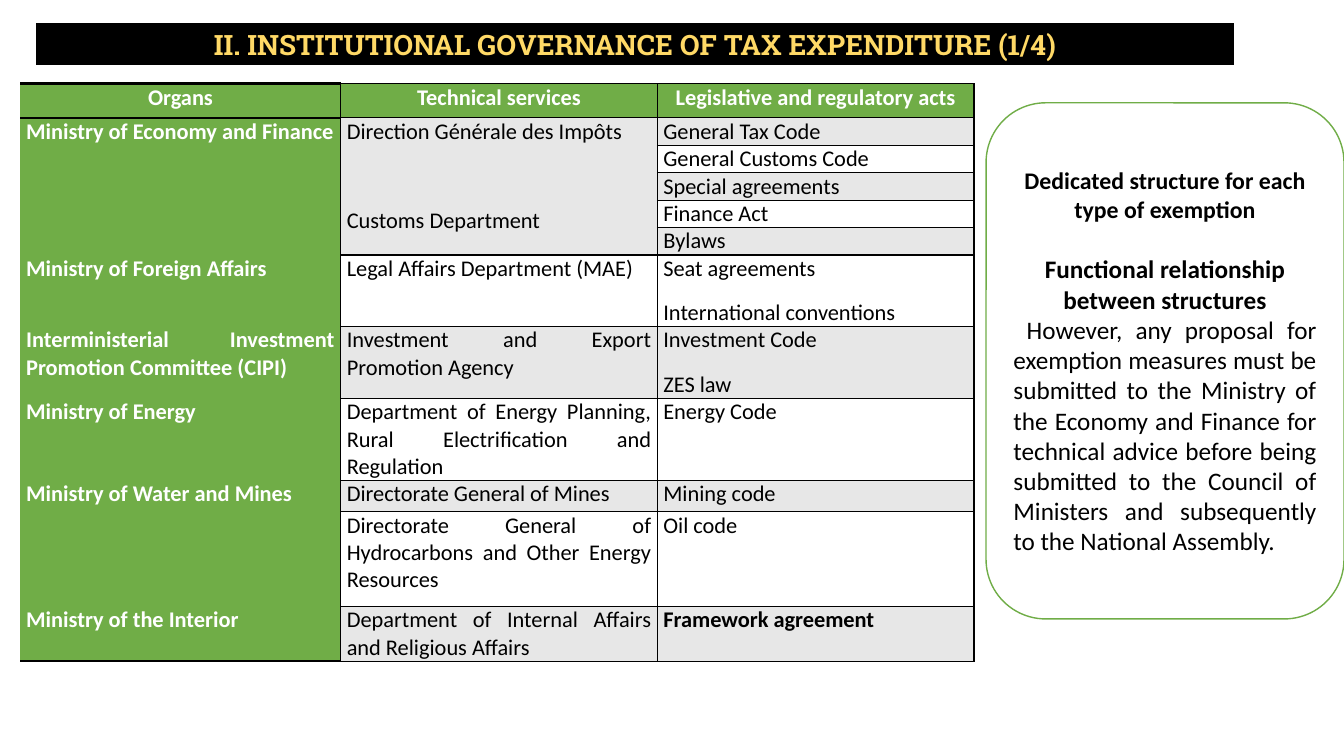
from lxml.etree import SubElement
from pptx import Presentation
from pptx.dml.color import RGBColor
from pptx.enum.shapes import MSO_SHAPE as SHAPE
from pptx.enum.text import MSO_ANCHOR as ANCHOR, PP_ALIGN as ALIGN
from pptx.oxml.ns import qn
from pptx.util import Pt

PX = 9144  # 100 px to the inch
GREEN, BLACK, WHITE, GREY, GOLD = "70AD47", "000000", "FFFFFF", "E7E7E7", "FFD966"


def rgb(color):
    return RGBColor.from_string(color)


def write(frame, lines, font, color, align=ALIGN.JUSTIFY):
    """Fill a text frame; each line is (text, size, bold, alignment or None, before, after)."""
    frame.word_wrap = True
    for i, (text, size, bold, own_align, before, after) in enumerate(lines):
        paragraph = frame.paragraphs[0] if i == 0 else frame.add_paragraph()
        paragraph.text = text
        paragraph.alignment = own_align or align
        paragraph.space_before, paragraph.space_after = Pt(before), Pt(after)
        paragraph.font.name, paragraph.font.size = font, Pt(size)
        paragraph.font.bold, paragraph.font.color.rgb = bold, rgb(color)


deck = Presentation()
deck.slide_width, deck.slide_height = 1333 * PX, 750 * PX
slide = deck.slides.add_slide(deck.slide_layouts[6])

# Title bar and side panel
title = ("II. INSTITUTIONAL GOVERNANCE OF TAX EXPENDITURE (1/4)", 20, True, None, 0, 0)
remarks = [
    ("Dedicated structure for each type of exemption", 17, True, ALIGN.CENTER, 0, 0),
    ("Functional relationship between structures", 18, True, ALIGN.CENTER, 22, 0),
    (" However, any proposal for exemption measures must be submitted to the Ministry of the "
     "Economy and Finance for technical advice before being submitted to the Council of "
     "Ministers and subsequently to the National Assembly.", 18, False, None, 0, 0),
]
panels = [
    (SHAPE.RECTANGLE, (35, 22, 1190, 44), BLACK, WHITE, 1.5,
     [title], "Roboto Slab", GOLD, ALIGN.CENTER),
    (SHAPE.ROUNDED_RECTANGLE, (978, 102, 355, 512), WHITE, GREEN, 1,
     remarks, "Calibri", BLACK, ALIGN.JUSTIFY),
]
for kind, box, fill, outline, weight, lines, font, color, align in panels:
    panel = slide.shapes.add_shape(kind, *(n * PX for n in box))
    panel.shadow.inherit = False
    panel.fill.solid()
    panel.fill.fore_color.rgb = rgb(fill)
    panel.line.color.rgb = rgb(outline)
    panel.line.width = Pt(weight)
    panel.text_frame.vertical_anchor = ANCHOR.MIDDLE
    write(panel.text_frame, lines, font, color, align)

# Table content: an empty string continues the cell above, "\n" parts paragraphs
governance = [
    ("Organs", "Technical services", "Legislative and regulatory acts"),
    ("Ministry of Economy and Finance", "Direction Générale des Impôts\nCustoms Department",
     "General Tax Code"),
    ("", "", "General Customs Code"),
    ("", "", "Special agreements"),
    ("", "", "Finance Act"),
    ("", "", "Bylaws"),
    ("Ministry of Foreign Affairs", "Legal Affairs Department (MAE)",
     "Seat agreements\nInternational conventions"),
    ("Interministerial Investment Promotion Committee (CIPI)",
     "Investment and Export Promotion Agency", "Investment Code\nZES law"),
    ("Ministry of Energy", "Department of Energy Planning, Rural Electrification and Regulation",
     "Energy Code"),
    ("Ministry of Water and Mines", "Directorate General of Mines", "Mining code"),
    ("", "Directorate General of Hydrocarbons and Other Energy Resources", "Oil code"),
    ("Ministry of the Interior", "Department of Internal Affairs and Religious Affairs",
     "Framework agreement"),
]
column_widths = [318, 314, 314]
row_heights = [34, 27, 27, 27, 27, 27, 70, 70, 81, 31, 94, 53]
last_row = len(governance) - 1

table = slide.shapes.add_table(len(governance), 3, 20 * PX, 83 * PX,
                               sum(column_widths) * PX, sum(row_heights) * PX).table
table.first_row = table.horz_banding = False
for column, width in zip(table.columns, column_widths):
    column.width = width * PX
for row, height in zip(table.rows, row_heights):
    row.height = height * PX
for top, bottom, col in [(1, 5, 0), (1, 5, 1), (9, 10, 0)]:
    table.cell(top, col).merge(table.cell(bottom, col))

for r, texts in enumerate(governance):
    for c, text in enumerate(texts):
        cell = table.cell(r, c)
        cell.margin_left = cell.margin_right = 6 * PX
        cell.margin_top = cell.margin_bottom = 0

        # Borders: the organs column keeps only its heavy rules and its right edge
        if c == 0:
            heavy_top, heavy_bottom = r <= 1, r in (0, last_row)
            weights = {"L": 0, "R": 1, "T": 2 * heavy_top, "B": 2 * heavy_bottom}
        else:
            weights = dict.fromkeys("LRTB", 1)
        properties = cell._tc.get_or_add_tcPr()
        for side, weight in weights.items():
            border = SubElement(properties, qn(f"a:ln{side}"), w=str(Pt(weight)))
            if weight:
                ink = SubElement(border, qn("a:solidFill"))
                SubElement(ink, qn("a:srgbClr"), val=BLACK)
            else:
                SubElement(border, qn("a:noFill"))

        # Fill: green header and organs, then grey and white rows in turn
        green = r == 0 or c == 0
        cell.fill.solid()
        cell.fill.fore_color.rgb = rgb(GREEN if green else GREY if r % 2 else WHITE)

        if text:
            bold = green or text == "Framework agreement"
            lines = [(part, 16, bold, None, 38 if part == "Customs Department" else 6, 6)
                     for part in text.split("\n")]
            write(cell.text_frame, lines, "Calibri", WHITE if green else BLACK,
                  ALIGN.CENTER if r == 0 else ALIGN.JUSTIFY)

deck.save("out.pptx")
